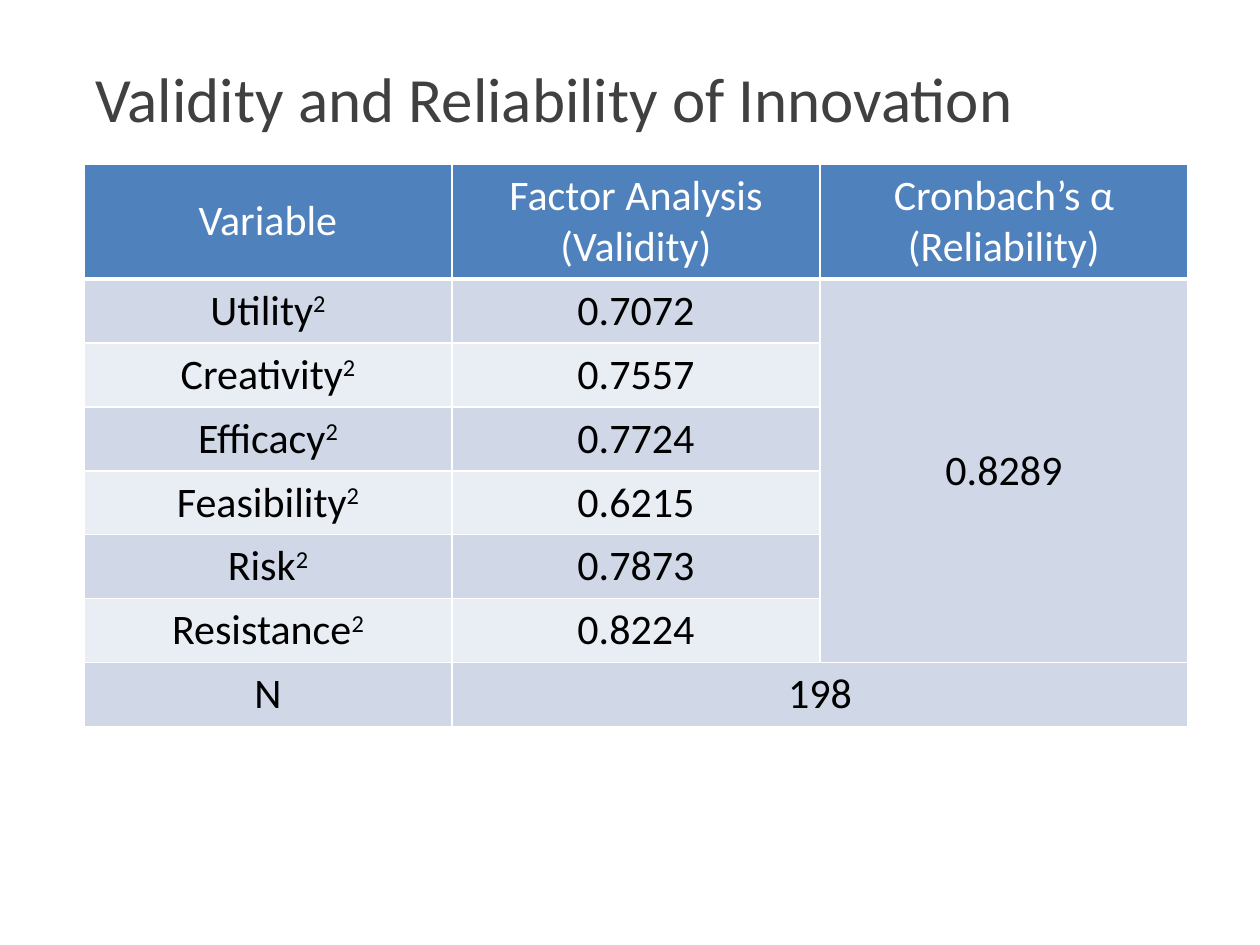
from dataclasses import dataclass

from lxml.etree import SubElement
from pptx import Presentation
from pptx.dml.color import RGBColor
from pptx.enum.text import MSO_ANCHOR as Anchor, MSO_AUTO_SIZE as AutoSize, PP_ALIGN as Align
from pptx.oxml.ns import qn
from pptx.util import Emu, Pt

PX = 914400 // 126
HEADER_HEIGHT = 112
ROW_HEIGHT = 63
COLUMN_WIDTH = 368
HEADER_FILL = "4F81BD"
BAND_FILLS = ("D0D8E8", "E9EDF4")
WHITE = "FFFFFF"
BLACK = "000000"


@dataclass(frozen=True)
class Factor:
    variable: str
    validity: str


HEADINGS = ("Variable", "Factor Analysis (Validity)", "Cronbach’s α\n(Reliability)")
FACTORS = (
    Factor("Utility", "0.7072"),
    Factor("Creativity", "0.7557"),
    Factor("Efficacy", "0.7724"),
    Factor("Feasibility", "0.6215"),
    Factor("Risk", "0.7873"),
    Factor("Resistance", "0.8224"),
)
RELIABILITY = "0.8289"
SAMPLE_SIZE = "198"


def px(length: int) -> Emu:
    return Emu(length * PX)


def color(value: str) -> RGBColor:
    return RGBColor.from_string(value)


def write(frame, text: str, *, size: int = 24, fill: str = BLACK,
          align=Align.CENTER, superscript: str = "") -> None:
    frame.text = text
    if superscript:
        exponent = frame.paragraphs[-1].add_run()
        exponent.text = superscript
        exponent._r.get_or_add_rPr().set("baseline", "30000")
    for paragraph in frame.paragraphs:
        paragraph.alignment = align
        for run in paragraph.runs:
            run.font.name = "Calibri"
            run.font.size = Pt(size)
            run.font.bold = False
            run.font.color.rgb = color(fill)


def add_border(cell, side: str, width: int) -> None:
    line = SubElement(cell._tc.get_or_add_tcPr(), qn(f"a:ln{side}"), w=str(Pt(width)))
    paint = SubElement(line, qn("a:solidFill"))
    SubElement(paint, qn("a:srgbClr"), val=WHITE)


def format_cell(cell, row: int) -> None:
    for side in "LRTB":
        below_header = (row, side) in ((0, "B"), (1, "T"))
        add_border(cell, side, 3 if below_header else 1)
    cell.fill.solid()
    cell.fill.fore_color.rgb = color(BAND_FILLS[(row - 1) % 2] if row else HEADER_FILL)
    cell.vertical_anchor = Anchor.MIDDLE


def add_title(slide) -> None:
    title = slide.shapes.title
    title.left, title.top, title.width, title.height = map(px, (83, 47, 1105, 101))
    frame = title.text_frame
    frame.word_wrap = True
    frame.auto_size = AutoSize.NONE
    frame.vertical_anchor = Anchor.MIDDLE
    write(frame, "Validity and Reliability of Innovation", size=36,
          fill="404040", align=Align.LEFT)


def add_results(slide) -> None:
    last = len(FACTORS) + 1
    results = slide.shapes.add_table(
        last + 1, len(HEADINGS), px(84), px(164),
        px(COLUMN_WIDTH * len(HEADINGS)), px(HEADER_HEIGHT + ROW_HEIGHT * last),
    ).table
    for column in results.columns:
        column.width = px(COLUMN_WIDTH)
    for index, row in enumerate(results.rows):
        row.height = px(ROW_HEIGHT if index else HEADER_HEIGHT)
        for cell in row.cells:
            format_cell(cell, index)

    for column, heading in enumerate(HEADINGS):
        write(results.cell(0, column).text_frame, heading, fill=WHITE)
    for row, factor in enumerate(FACTORS, 1):
        write(results.cell(row, 0).text_frame, factor.variable, superscript="2")
        write(results.cell(row, 1).text_frame, factor.validity)

    results.cell(1, 2).merge(results.cell(last - 1, 2))
    write(results.cell(1, 2).text_frame, RELIABILITY)
    results.cell(last, 1).merge(results.cell(last, 2))
    write(results.cell(last, 0).text_frame, "N")
    write(results.cell(last, 1).text_frame, SAMPLE_SIZE)


def main() -> None:
    deck = Presentation()
    deck.slide_width, deck.slide_height = px(1260), px(945)
    slide = deck.slides.add_slide(deck.slide_layouts[5])
    add_title(slide)
    add_results(slide)
    deck.save("out.pptx")


if __name__ == "__main__":
    main()
